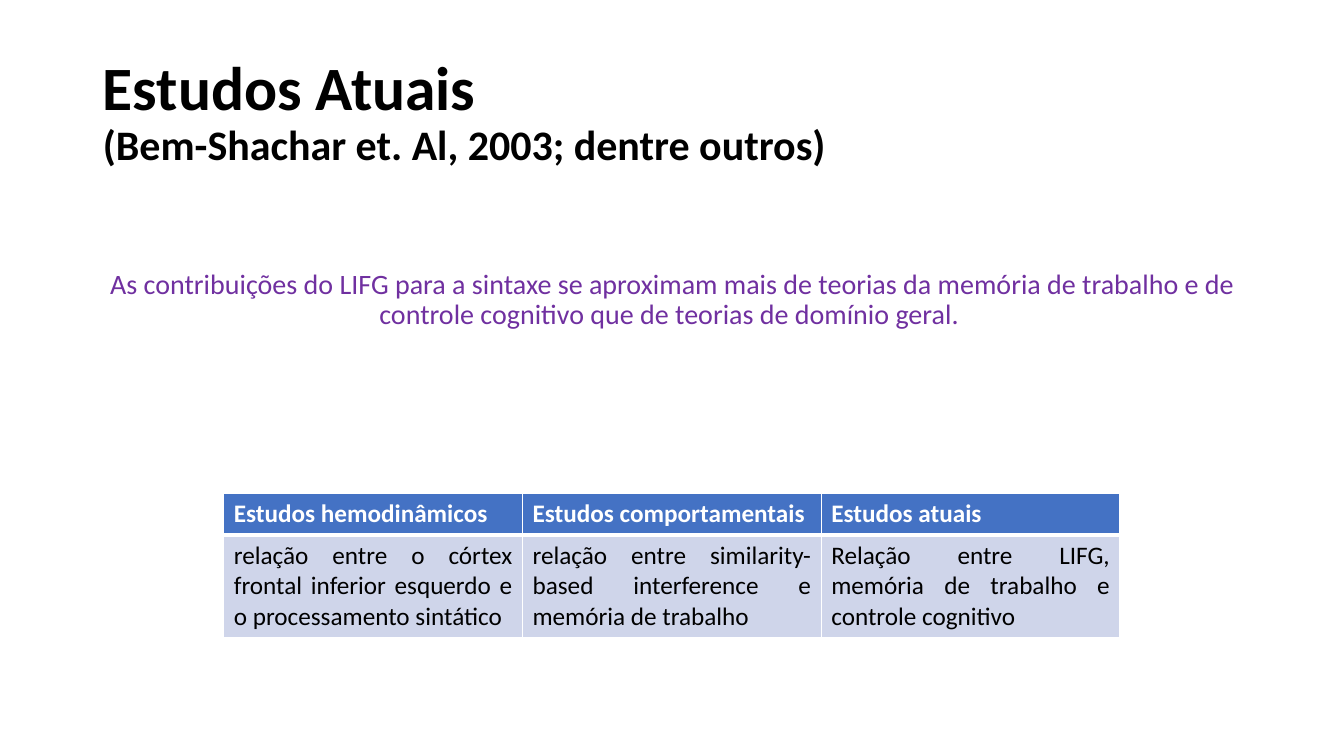
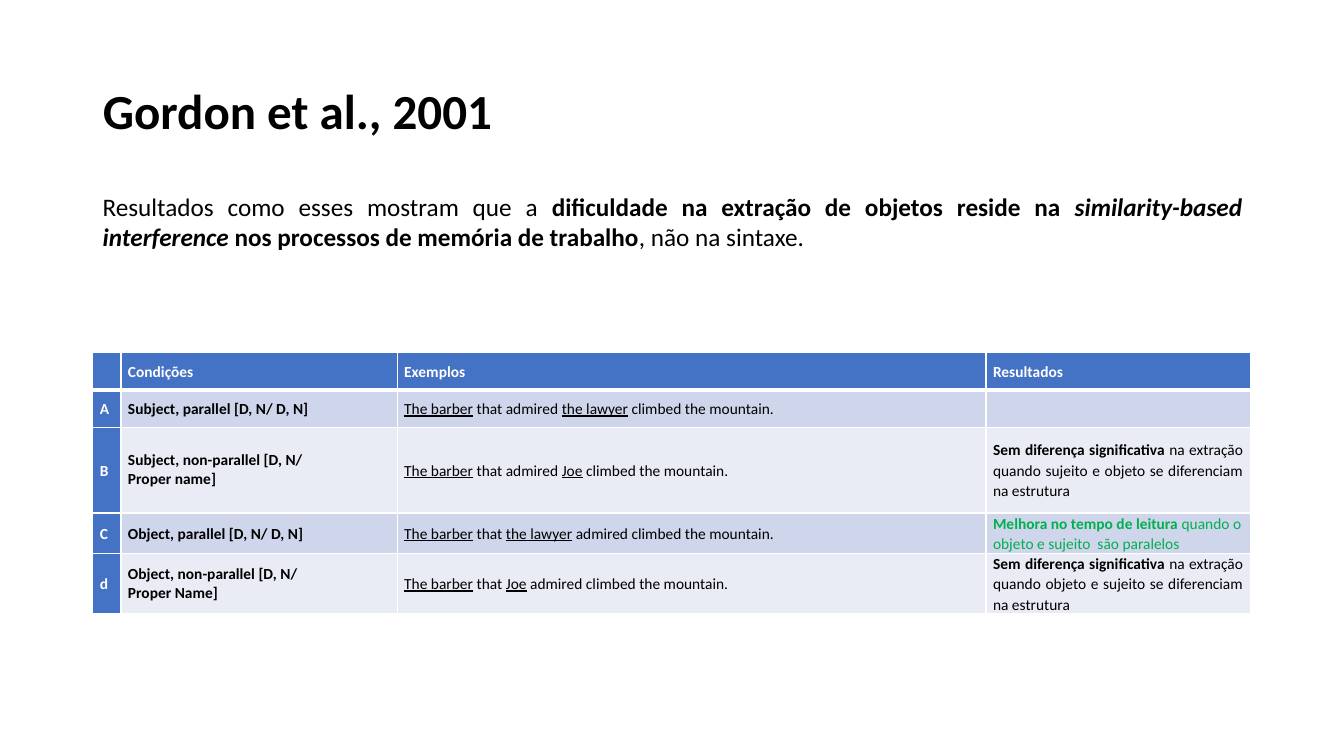
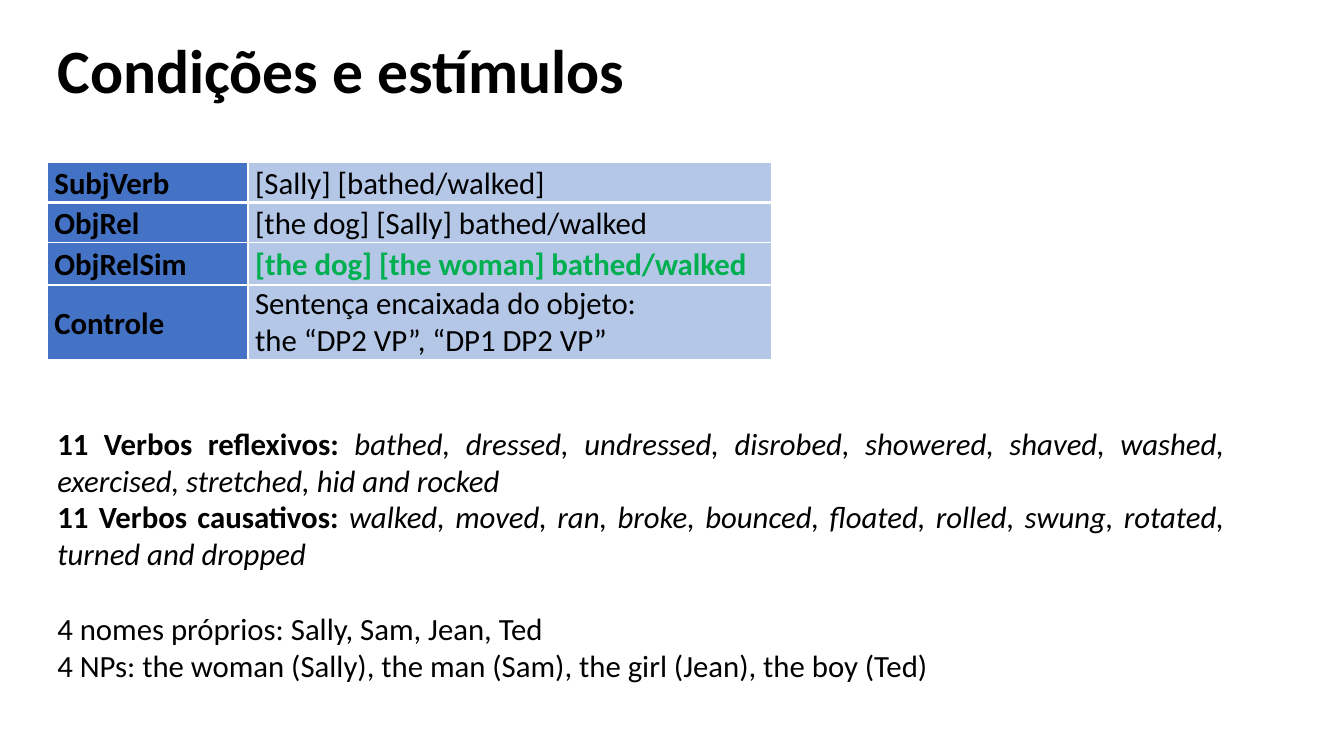
from dataclasses import dataclass
from itertools import cycle

from pptx import Presentation
from pptx.dml.color import RGBColor
from pptx.enum.text import MSO_ANCHOR, MSO_AUTO_SIZE, PP_ALIGN
from pptx.oxml.ns import qn
from pptx.util import Inches, Pt
from lxml.etree import SubElement

W, H = Inches(13.33), Inches(7.5)
FONT = "Calibri"
BLACK, WHITE = "000000", "FFFFFF"
BLUE, BAND_1, BAND_2, LIGHT_BLUE = "4472C4", "CFD5EA", "E9EBF5", "B4C7E7"
PURPLE, GREEN = "7030A0", "00B050"
TITLE_BOX = (6.9, 5.33, 86.27, 19.33)
LEFT, CENTER, JUSTIFY = PP_ALIGN.LEFT, PP_ALIGN.CENTER, PP_ALIGN.JUSTIFY
TITLE_ONLY, TITLE_AND_BODY = 5, 1


@dataclass
class Cell:
    """Text of a table cell; parts between bars take the styles in turn."""
    text: str = ""
    styles: tuple = ("",)
    color: str = BLACK
    align: int = JUSTIFY


def rgb(value):
    return RGBColor.from_string(value)


def scale(box):
    """Turn percentages of the slide into lengths."""
    return [int(share * side / 100) for share, side in zip(box, (W, H, W, H))]


def place(s, box):
    s.left, s.top, s.width, s.height = scale(box)


def set_all(obj, values):
    for name, value in values.items():
        setattr(obj, name, value)


def add_runs(p, text, styles, size, color):
    """Write the parts between bars; styles hold the letters b, i and u."""
    for part, style in zip(text.split("|"), cycle(styles)):
        r = p.add_run()
        r.text = part
        set_all(r.font, dict(name=FONT, size=Pt(size), bold="b" in style,
                             italic="i" in style, underline="u" in style))
        r.font.color.rgb = rgb(color)


def write(tf, text, styles=("",), size=18, color=BLACK, **layout):
    """Fill a frame with one paragraph for each line of the text."""
    for i, line in enumerate(text.split("\n")):
        p = tf.add_paragraph() if i else tf.paragraphs[0]
        set_all(p, layout)
        add_runs(p, line, styles, size, color)


def add_title(slide, lines, box=TITLE_BOX):
    """Place the title; lines are pairs of text and size."""
    s = slide.shapes.title
    place(s, box)
    tf = s.text_frame
    set_all(tf, dict(vertical_anchor=MSO_ANCHOR.MIDDLE, word_wrap=True,
                     auto_size=MSO_AUTO_SIZE.NONE))
    p = tf.paragraphs[0]
    set_all(p, dict(alignment=LEFT, line_spacing=0.9))
    for i, (text, size) in enumerate(lines):
        if i:
            p.add_line_break()
        add_runs(p, text, ("b",), size, BLACK)


def add_body(slide, text, box):
    """Centred purple statement without a bullet."""
    s = slide.placeholders[1]
    place(s, box)
    tf = s.text_frame
    set_all(tf, dict(word_wrap=True, auto_size=MSO_AUTO_SIZE.NONE,
                     margin_top=Inches(0.5)))
    write(tf, text, size=20, color=PURPLE, alignment=CENTER,
          line_spacing=0.9, space_before=Pt(0))
    pPr = tf.paragraphs[0]._p.get_or_add_pPr()
    pPr.set("marL", "0")
    pPr.set("indent", "0")
    SubElement(pPr, qn("a:buNone"))


def add_text(slide, text, box, styles, size):
    tf = slide.shapes.add_textbox(*scale(box)).text_frame
    set_all(tf, dict(word_wrap=True, auto_size=MSO_AUTO_SIZE.SHAPE_TO_FIT_TEXT))
    write(tf, text, styles, size, alignment=JUSTIFY)
    return tf


def paint(cell, fill, bottom):
    """White borders and a solid fill; bottom is the lower border in points."""
    tcPr = cell._tc.get_or_add_tcPr()
    for side, width in (("L", 1), ("R", 1), ("T", 1), ("B", bottom)):
        ln = SubElement(tcPr, qn(f"a:ln{side}"), w=str(Pt(width)))
        SubElement(SubElement(ln, qn("a:solidFill")), qn("a:srgbClr"), val=WHITE)
    cell.fill.solid()
    cell.fill.fore_color.rgb = rgb(fill)


def add_table(slide, box, columns, heights, rows, fill_of, size, compact=True):
    """Columns and heights are weights that share out the box."""
    left, top, width, height = scale(box)
    table = slide.shapes.add_table(len(rows), len(columns),
                                   left, top, width, height).table
    for col, weight in zip(table.columns, columns):
        col.width = int(width * weight / sum(columns))
    for row, weight in zip(table.rows, heights):
        row.height = int(height * weight / sum(heights))
    for i, row in enumerate(rows):
        for j, content in enumerate(row):
            cell = table.cell(i, j)
            layout = dict(alignment=content.align)
            if compact:
                set_all(cell, dict(vertical_anchor=MSO_ANCHOR.MIDDLE,
                                   margin_left=Inches(0.07), margin_right=Inches(0.07),
                                   margin_top=0, margin_bottom=0))
                if "\n" not in content.text:
                    layout.update(line_spacing=1.07, space_after=Pt(8))
            write(cell.text_frame, content.text, content.styles, size,
                  content.color, **layout)
            # The header row is set off by a thicker rule.
            paint(cell, fill_of(i, j), 1 if i else 3)


def label(text, color=BLACK, align=JUSTIFY):
    return Cell(text, ("b",), color, align)


def example(text):
    return Cell(text, ("u", ""), align=LEFT)


def result(text, color=BLACK, align=JUSTIFY):
    return Cell(text, ("b", ""), color, align)


def current_studies(prs):
    slide = prs.slides.add_slide(prs.slide_layouts[TITLE_AND_BODY])
    add_title(slide, [("Estudos Atuais", 44),
                      ("(Bem-Shachar et. Al, 2003; dentre outros)", 30)])
    add_body(slide, "As contribuições do LIFG para a sintaxe se aproximam mais de "
             "teorias da memória de trabalho e de controle cognitivo que de teorias "
             "de domínio geral. ", (6.9, 29.07, 86.27, 31.87))
    heads = ("Estudos hemodinâmicos", "Estudos comportamentais", "Estudos atuais")
    findings = (
        "relação entre o córtex frontal inferior esquerdo e o processamento sintático",
        "relação entre similarity-based interference e memória de trabalho",
        "Relação entre LIFG, memória de trabalho e controle cognitivo")
    rows = [[label(t, WHITE, LEFT) for t in heads], [Cell(t) for t in findings]]
    add_table(slide, (16.65, 65.33, 66.69, 18.8), (1, 1, 1), (0.41, 1), rows,
              lambda i, j: BAND_1 if i else BLUE, 18, compact=False)


def gordon_results(prs):
    slide = prs.slides.add_slide(prs.slide_layouts[TITLE_ONLY])
    add_title(slide, [("Gordon et al., 2001", 35)])
    add_text(slide, "Resultados como esses mostram que a |dificuldade na extração de "
             "objetos reside na |similarity-based interference| nos processos de "
             "memória de trabalho|, não na sintaxe.",
             (6.9, 24.67, 86.27, 9.47), ("", "b", "bi", "b", ""), 18)
    no_difference = ("Sem diferença significativa| na extração quando {} "
                     "se diferenciam na estrutura ")
    rows = [
        [Cell()] + [label(t, WHITE) for t in ("Condições", "Exemplos", "Resultados")],
        [label("A", WHITE), label("Subject, parallel [D, N/ D, N]"),
         example("The barber| that admired |the lawyer| climbed the mountain."), Cell()],
        [label("B", WHITE), label("Subject, non-parallel [D, N/ \nProper name]"),
         example("The barber| that admired |Joe| climbed the mountain."),
         result(no_difference.format("sujeito e objeto"))],
        [label("C", WHITE), label("Object, parallel [D, N/ D, N]"),
         example("The barber| that |the lawyer| admired climbed the mountain."),
         result("Melhora no tempo de leitura |quando o objeto e sujeito  são paralelos",
                GREEN, LEFT)],
        [label("d", WHITE), label("Object, non-parallel [D, N/ \nProper Name]"),
         example("The barber| that |Joe| admired climbed the mountain."),
         result(no_difference.format("objeto e sujeito"))],
    ]

    def fill_of(i, j):
        if i == 0 or j == 0:
            return BLUE
        return BAND_1 if i % 2 else BAND_2

    add_table(slide, (6.9, 46.67, 86.12, 34.53), (0.28, 2.74, 5.84, 2.62),
              (0.37, 0.37, 0.85, 0.4, 0.6), rows, fill_of, 11)


def conditions(prs):
    slide = prs.slides.add_slide(prs.slide_layouts[TITLE_ONLY])
    add_title(slide, [("Condições e estímulos", 44)], (3.53, 0, 86.27, 19.33))
    rows = [
        [label("SubjVerb"), Cell("[Sally] [bathed/walked]")],
        [label("ObjRel"), Cell("[the dog] [Sally] bathed/walked")],
        [label("ObjRelSim"), label("[the dog] [the woman] bathed/walked", GREEN)],
        [label("Controle"),
         Cell("Sentença encaixada do objeto: \nthe “DP2 VP”, “DP1 DP2 VP”")],
    ]
    add_table(slide, (3.53, 21.47, 53.86, 25.87), (1.99, 5.19),
              (0.38, 0.4, 0.42, 0.74), rows,
              lambda i, j: LIGHT_BLUE if j else BLUE, 22)
    tf = add_text(slide, "11 Verbos reflexivos: |bathed, dressed, undressed, disrobed, "
                  "showered, shaved, washed, exercised, stretched, hid and rocked\n"
                  "11 Verbos causativos: |walked, moved, ran, broke, bounced, floated, "
                  "rolled, swung, rotated, turned and dropped",
                  (3.53, 55.47, 88.3, 40), ("b", "i"), 22)
    names = ("4 nomes próprios: Sally, Sam, Jean, Ted",
             "4 NPs: the woman (Sally), the man (Sam), the girl (Jean), the boy (Ted)")
    for text, gap in zip(names, (26.8, 0)):
        p = tf.add_paragraph()
        set_all(p, dict(alignment=JUSTIFY, space_before=Pt(gap)))
        add_runs(p, text, ("",), 22, BLACK)


def main():
    prs = Presentation()
    prs.slide_width, prs.slide_height = W, H
    for build in (current_studies, gordon_results, conditions):
        build(prs)
    prs.save("out.pptx")


if __name__ == "__main__":
    main()
